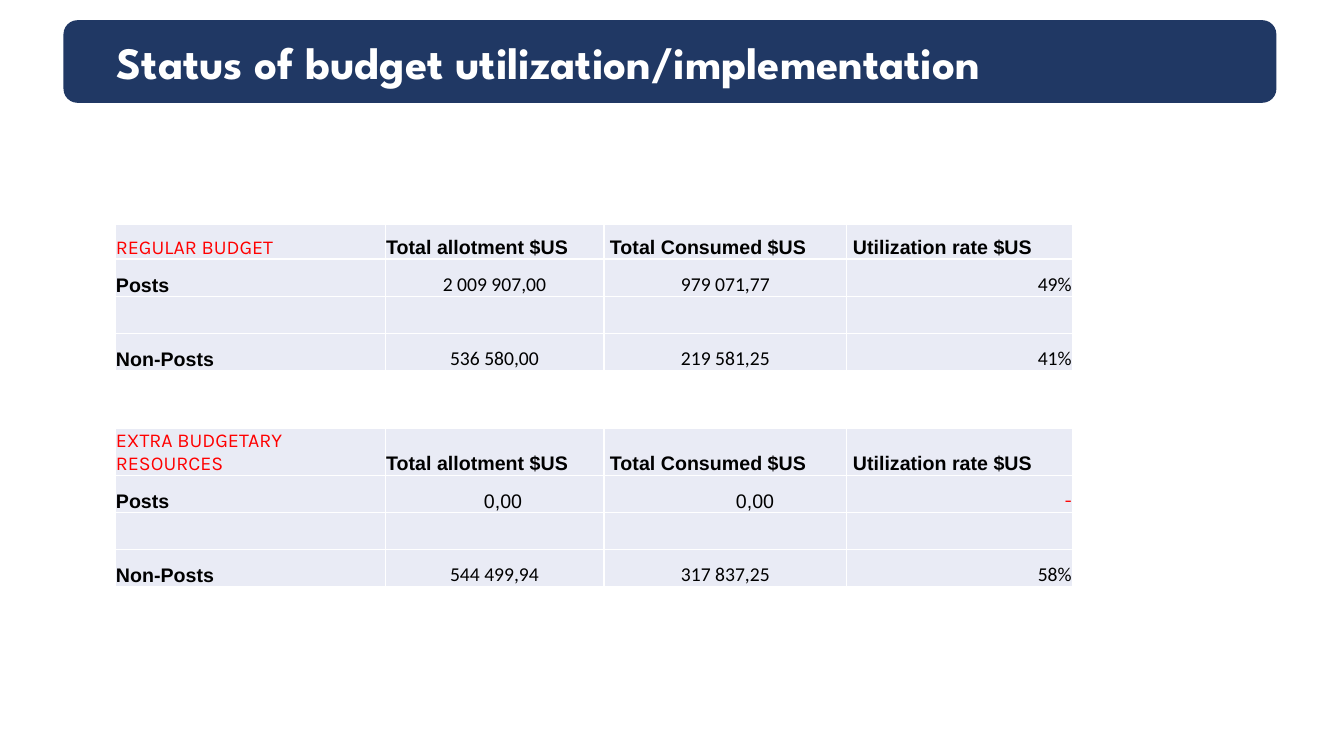
from dataclasses import dataclass

from lxml.etree import SubElement
from pptx import Presentation
from pptx.dml.color import RGBColor
from pptx.enum.shapes import MSO_SHAPE
from pptx.enum.text import MSO_ANCHOR, PP_ALIGN
from pptx.oxml.ns import qn
from pptx.util import Inches, Pt


@dataclass(frozen=True)
class Theme:
    navy: RGBColor = RGBColor(0x20, 0x38, 0x64)
    white: RGBColor = RGBColor(0xFF, 0xFF, 0xFF)
    black: RGBColor = RGBColor(0x00, 0x00, 0x00)
    red: RGBColor = RGBColor(0xFF, 0x00, 0x00)
    cell: RGBColor = RGBColor(0xE9, 0xEB, 0xF5)
    title_size: Pt = Pt(32)
    table_size: Pt = Pt(14)


theme = Theme()


def write(para, text, font_name, size, color, bold=False, align=PP_ALIGN.LEFT, indent=0):
    """Fill a paragraph with text; indent is the left margin in inches."""
    if indent:
        properties = para._p.get_or_add_pPr()
        properties.set("marL", str(Inches(indent)))
        properties.set("indent", "0")
    para.text = text
    para.alignment = align
    para.font.name = font_name
    para.font.size = size
    para.font.bold = bold
    para.font.color.rgb = color


def format_cell(cell):
    """Give a cell tight margins, thin white borders and the pale fill."""
    cell.margin_left = cell.margin_right = cell.margin_top = Inches(0.01)
    cell.margin_bottom = 0
    cell.vertical_anchor = MSO_ANCHOR.BOTTOM
    properties = cell._tc.get_or_add_tcPr()
    for side in ("a:lnL", "a:lnR", "a:lnT", "a:lnB"):
        line = SubElement(properties, qn(side), w=str(Pt(1)))
        fill = SubElement(line, qn("a:solidFill"))
        SubElement(fill, qn("a:srgbClr"), val=str(theme.white))
    cell.fill.solid()
    cell.fill.fore_color.rgb = theme.cell


deck = Presentation()
deck.slide_width, deck.slide_height = Inches(13.33), Inches(7.5)
page = deck.slides.add_slide(deck.slide_layouts[6])

# Title banner
banner = page.shapes.add_shape(
    MSO_SHAPE.ROUNDED_RECTANGLE, Inches(0.63), Inches(0.2), Inches(12.03), Inches(0.82))
banner.adjustments[0] = 0.17
banner.shadow.inherit = False
banner.fill.solid()
banner.fill.fore_color.rgb = theme.navy
banner.line.fill.background()
frame = banner.text_frame
frame.word_wrap = True
frame.vertical_anchor = MSO_ANCHOR.MIDDLE
frame.margin_left = frame.margin_right = Inches(0.1)
frame.margin_top = frame.margin_bottom = Inches(0.1)
write(frame.paragraphs[0], "Status of budget utilization/implementation",
      "League Spartan", theme.title_size, theme.white, bold=True, indent=0.39)

# Budget tables
column_widths = (2.68, 2.17, 2.41, 2.24)
row_heights = (0.34, 0.37, 0.37, 0.37)
headings = ("Total allotment $US", "Total Consumed $US", "Utilization rate $US")
heading_indents = (0, 0, 0.05, 0.05)
zero_indents = (0, 0.97, 1.3, 0)
value_aligns = (PP_ALIGN.LEFT, PP_ALIGN.CENTER, PP_ALIGN.CENTER, PP_ALIGN.RIGHT)
blank_row = ("", "", "", "")
budgets = (
    (2.23, (
        ("REGULAR BUDGET", *headings),
        ("Posts", "2 009 907,00", "979 071,77", "49%"),
        blank_row,
        ("Non-Posts", "536 580,00", "219 581,25", "41%"),
    )),
    (4.25, (
        ("EXTRA BUDGETARY RESOURCES", *headings),
        ("Posts", "0,00", "0,00", "-"),
        blank_row,
        ("Non-Posts", "544 499,94", "317 837,25", "58%"),
    )),
)

for top, rows in budgets:
    table = page.shapes.add_table(
        len(rows), len(column_widths), Inches(1.14), Inches(top),
        Inches(sum(column_widths)), Inches(sum(row_heights))).table
    table.first_row = table.horz_banding = False
    for column, width in zip(table.columns, column_widths):
        column.width = Inches(width)
    for row, height in zip(table.rows, row_heights):
        row.height = Inches(height)

    for r, values in enumerate(rows):
        for c, text in enumerate(values):
            cell = table.cell(r, c)
            format_cell(cell)
            font_name, color, bold = "Calibri", theme.black, False
            align, indent = value_aligns[c], 0
            if (r, c) == (0, 0) or text == "-":
                font_name, color = "Karla", theme.red
            elif r == 0 or c == 0:
                font_name, bold = "Arial", True
                align, indent = PP_ALIGN.LEFT, heading_indents[c]
            elif text == "0,00":
                font_name, align, indent = "Arial", PP_ALIGN.LEFT, zero_indents[c]
            write(cell.text_frame.paragraphs[0], text, font_name,
                  theme.table_size, color, bold, align, indent)

deck.save("out.pptx")
